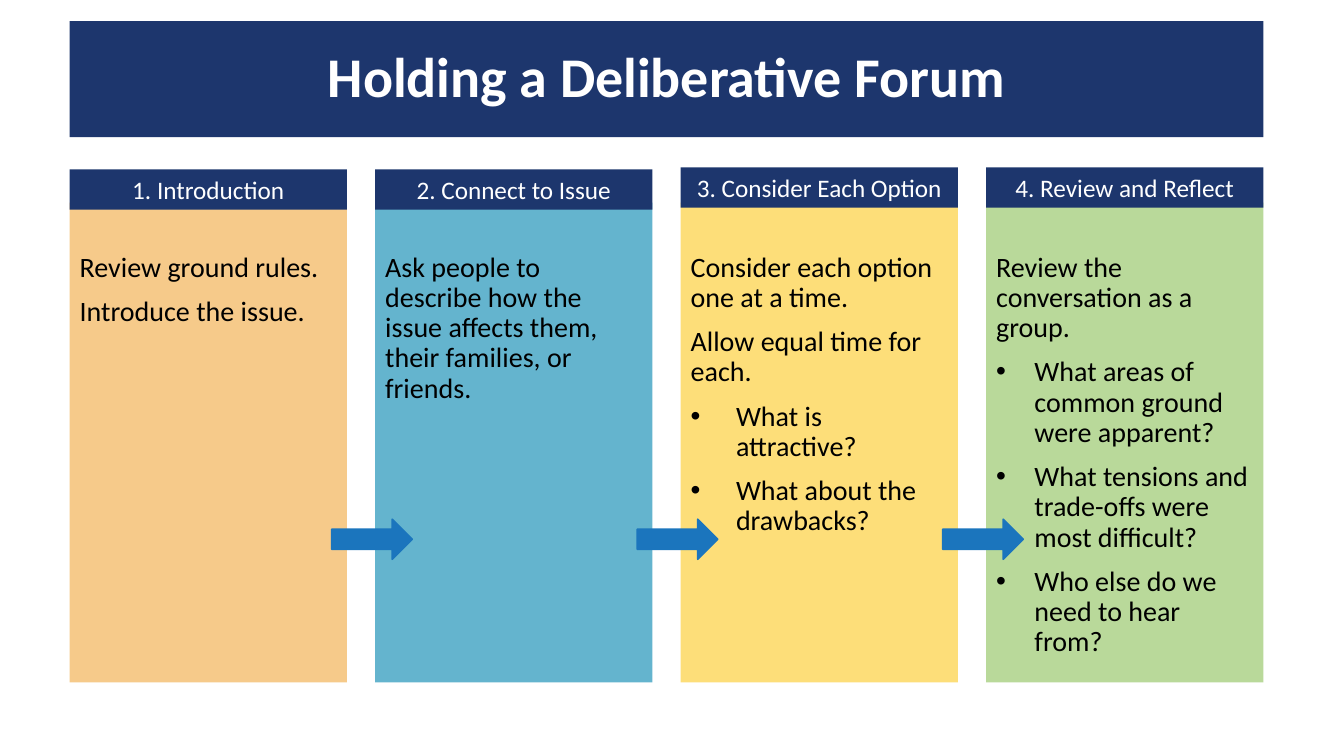
from pptx import Presentation
from pptx.dml.color import RGBColor
from pptx.enum.shapes import MSO_SHAPE
from pptx.enum.text import MSO_ANCHOR, MSO_AUTO_SIZE, PP_ALIGN
from pptx.oxml.ns import qn
from pptx.util import Inches, Pt
from lxml import etree

RECTANGLE, ARROW = MSO_SHAPE.RECTANGLE, MSO_SHAPE.RIGHT_ARROW
TOP, MIDDLE = MSO_ANCHOR.TOP, MSO_ANCHOR.MIDDLE
LEFT, CENTER = PP_ALIGN.LEFT, PP_ALIGN.CENTER
NO_AUTOFIT = MSO_AUTO_SIZE.NONE
COMPARISON_LAYOUT = 4

NAVY, BLUE, WHITE, BLACK = "1D366D", "1B75BD", "FFFFFF", "000000"
MARGIN, COLUMN_PITCH, COLUMN_WIDTH = 0.69, 3.03, 2.75
BODY_TOP, BODY_HEIGHT = 2.01, 4.76
HEADING_HEIGHT = 0.4
ARROW_TOP, ARROW_WIDTH, ARROW_HEIGHT, ARROW_OVERLAP = 5.15, 0.8, 0.4, 0.43

STAGES = [
    dict(heading="1. Introduction", heading_top=1.68, fill="F0A83C", opacity=60, hang=0,
         lines=["Review ground rules.", "Introduce the issue."], bullets=[]),
    dict(heading="2. Connect to Issue", heading_top=1.68, fill="2395BA", opacity=70, hang=0,
         lines=["Ask people to describe how the issue affects them, their families, or friends."],
         bullets=[]),
    dict(heading="3. Consider Each Option", heading_top=1.66, fill="FDDB6B", opacity=90, hang=0.45,
         lines=["Consider each option one at a time.", "Allow equal time for each."],
         bullets=["What is attractive?", "What about the drawbacks?"]),
    dict(heading="4. Review and Reflect", heading_top=1.66, fill="95C665", opacity=65, hang=0.38,
         lines=["Review the conversation as a group."],
         bullets=["What areas of common ground were apparent?",
                  "What tensions and trade-offs were most difficult?",
                  "Who else do we need to hear from?"]),
]


def color(value):
    return RGBColor.from_string(value)


def place(shape, left, top, width, height):
    shape.left, shape.top = Inches(left), Inches(top)
    shape.width, shape.height = Inches(width), Inches(height)


def paint(shape, fill, opacity=100):
    shape.fill.solid()
    shape.fill.fore_color.rgb = color(fill)
    if opacity < 100:
        tone = shape._element.spPr.find(qn("a:solidFill")).find(qn("a:srgbClr"))
        etree.SubElement(tone, qn("a:alpha")).set("val", str(opacity * 1000))


def prepare_frame(shape, anchor, top_inset=0.05):
    frame = shape.text_frame
    frame.auto_size = NO_AUTOFIT
    frame.word_wrap = True
    frame.vertical_anchor = anchor
    frame.margin_top = Inches(top_inset)
    return frame


def write(para, text, size, ink, bold=False, align=LEFT, spacing=1.0, before=0,
          hang=0, bullet=False):
    para.alignment = align
    para.line_spacing = spacing
    para.space_before = Pt(before)
    span = para.add_run()
    span.text = text
    span.font.name = "Calibri"
    span.font.size = Pt(size)
    span.font.bold = bold
    span.font.color.rgb = color(ink)
    properties = para._p.get_or_add_pPr()
    properties.set("marL", str(Inches(hang)))
    properties.set("indent", str(-Inches(hang)))
    if bullet:
        etree.SubElement(properties, qn("a:buFont")).set("typeface", "Arial")
        etree.SubElement(properties, qn("a:buChar")).set("char", "•")
    else:
        etree.SubElement(properties, qn("a:buNone"))


def add_title(page, box):
    title = page.shapes.title
    place(title, *box)
    paint(title, NAVY)
    frame = prepare_frame(title, MIDDLE)
    write(frame.paragraphs[0], "Holding a Deliberative Forum", 40, WHITE,
          bold=True, align=CENTER, spacing=0.9)


def add_body(body, box, stage):
    place(body, *box)
    paint(body, stage["fill"], stage["opacity"])
    frame = prepare_frame(body, TOP, top_inset=0.5)
    items = [(text, False) for text in stage["lines"]]
    items += [(text, True) for text in stage["bullets"]]
    for index, (text, bullet) in enumerate(items):
        para = frame.add_paragraph() if index else frame.paragraphs[0]
        write(para, text, 20, BLACK, spacing=0.9, before=10 if index else 0,
              hang=stage["hang"] if bullet else 0, bullet=bullet)


def add_block(page, kind, box, fill):
    block = page.shapes.add_shape(kind, *(Inches(length) for length in box))
    block.shadow.inherit = False
    paint(block, fill)
    block.line.fill.background()
    return block


def add_heading(page, box, text):
    heading = add_block(page, RECTANGLE, box, NAVY)
    frame = prepare_frame(heading, MIDDLE)
    write(frame.paragraphs[0], text, 18, WHITE, align=CENTER)


def add_arrow(page, box):
    arrow = add_block(page, ARROW, box, BLUE)
    arrow.line.color.rgb = color(BLUE)
    arrow.line.width = Pt(1)


def main():
    deck = Presentation()
    deck.slide_width, deck.slide_height = Inches(13.33), Inches(7.5)
    page = deck.slides.add_slide(deck.slide_layouts[COMPARISON_LAYOUT])
    lefts = [MARGIN + COLUMN_PITCH * index for index in range(len(STAGES))]
    add_title(page, (MARGIN, 0.21, lefts[-1] + COLUMN_WIDTH - MARGIN, 1.15))
    for index, (left, stage) in enumerate(zip(lefts, STAGES), start=1):
        add_body(page.placeholders[index], (left, BODY_TOP, COLUMN_WIDTH, BODY_HEIGHT), stage)
        add_heading(page, (left, stage["heading_top"], COLUMN_WIDTH, HEADING_HEIGHT),
                    stage["heading"])
    for left in lefts[1:]:
        add_arrow(page, (left - ARROW_OVERLAP, ARROW_TOP, ARROW_WIDTH, ARROW_HEIGHT))
    deck.save("out.pptx")


if __name__ == "__main__":
    main()
